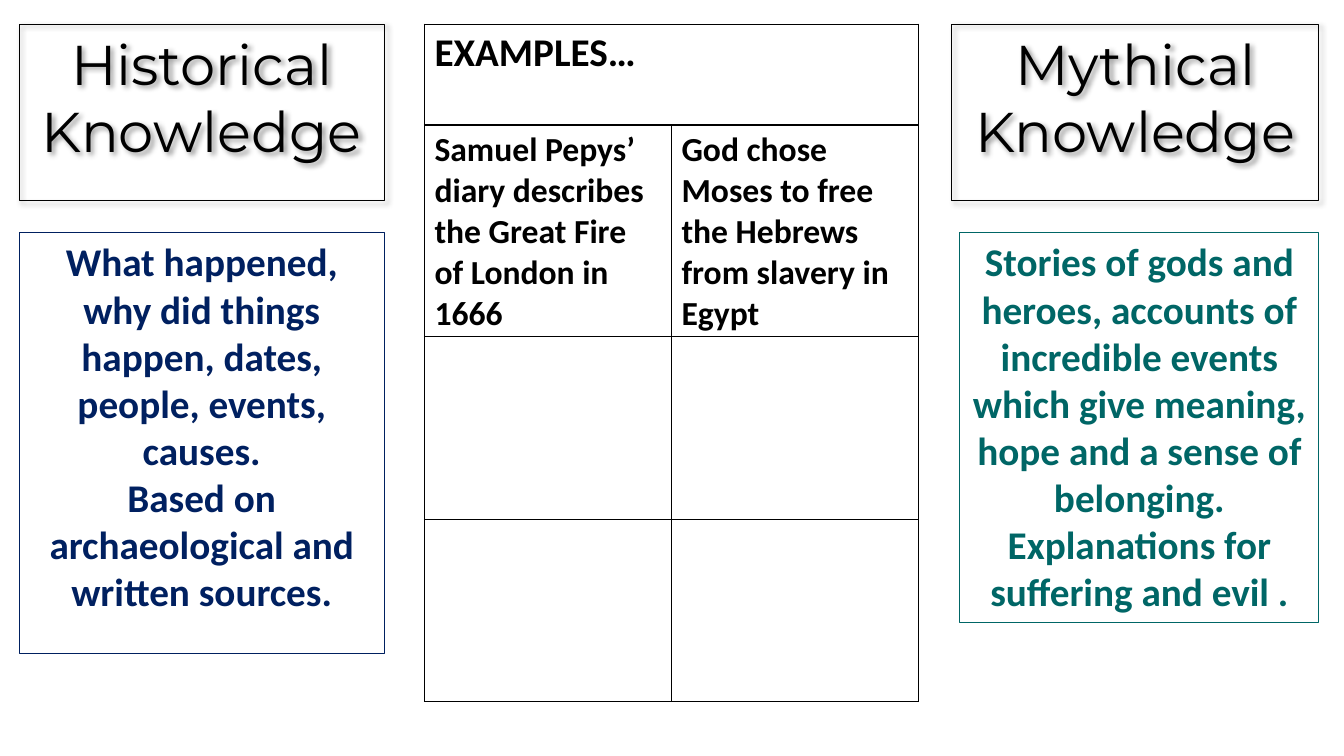
from dataclasses import dataclass

from lxml import etree
from pptx import Presentation
from pptx import util as u
from pptx.dml import color
from pptx.enum import text
from pptx.oxml import ns


@dataclass(frozen=True)
class Theme:
    ink: str = "000000"
    history: str = "002060"
    myth: str = "006666"
    heading_font: str = "Montserrat"
    body_font: str = "Calibri"
    heading_size: int = 40
    body_size: int = 28
    example_size: int = 24
    outline: float = 0.75
    grid: int = 1


class KnowledgeSlide:
    EMU_PER_PX = 9144

    def __init__(self, deck, theme):
        self.theme = theme
        self.slide = deck.slides.add_slide(deck.slide_layouts[6])

    @classmethod
    def px(cls, length):
        return u.Emu(length * cls.EMU_PER_PX)

    def set_words(self, frame, words, font, size, ink, bold, align):
        frame.text = words
        for paragraph in frame.paragraphs:
            paragraph.alignment = align
            for run in paragraph.runs:
                run.font.name = font
                run.font.size = u.Pt(size)
                run.font.bold = bold
                run.font.color.rgb = color.RGBColor.from_string(ink)

    def box(self, bounds, words, font, size, ink, bold):
        panel = self.slide.shapes.add_textbox(*map(self.px, bounds))
        panel.line.color.rgb = color.RGBColor.from_string(ink)
        panel.line.width = u.Pt(self.theme.outline)
        panel.text_frame.word_wrap = True
        self.set_words(panel.text_frame, words, font, size, ink, bold, text.PP_ALIGN.CENTER)
        return panel

    def heading(self, bounds, words):
        theme = self.theme
        panel = self.box(bounds, words, theme.heading_font, theme.heading_size, theme.ink, False)
        panel.shadow.inherit = False
        effects = panel._element.spPr.find(ns.qn("a:effectLst"))
        shadow = etree.SubElement(
            effects, ns.qn("a:outerShdw"), blurRad=str(u.Pt(4)), dist=str(u.Pt(3)),
            dir=str(45 * 60000), algn="tl", rotWithShape="0")
        shade = etree.SubElement(shadow, ns.qn("a:srgbClr"), val=theme.ink)
        etree.SubElement(shade, ns.qn("a:alpha"), val="40000")

    def definition(self, bounds, words, ink):
        self.box(bounds, words, self.theme.body_font, self.theme.body_size, ink, True)

    def border(self, cell):
        properties = cell._tc.get_or_add_tcPr()
        for place, side in enumerate(("lnL", "lnR", "lnT", "lnB")):
            edge = etree.Element(ns.qn(f"a:{side}"), w=str(u.Pt(self.theme.grid)))
            fill = etree.SubElement(edge, ns.qn("a:solidFill"))
            etree.SubElement(fill, ns.qn("a:srgbClr"), val=self.theme.ink)
            properties.insert(place, edge)

    def examples(self, bounds, title, pairs, heights):
        theme = self.theme
        frame = self.slide.shapes.add_table(len(heights), 2, *map(self.px, bounds))
        table = frame.table
        table.first_row = table.horz_banding = False
        for row, height in zip(table.rows, heights):
            row.height = self.px(height)
        for cell in table.iter_cells():
            cell.fill.background()
            cell.margin_bottom = 0
            self.border(cell)
        table.cell(0, 0).merge(table.cell(0, 1))
        entries = [(0, 0, title, theme.body_size)]
        entries += [(r, c, words, theme.example_size)
                    for r, pair in enumerate(pairs, 1) for c, words in enumerate(pair)]
        for r, c, words, size in entries:
            self.set_words(table.cell(r, c).text_frame, words, theme.body_font, size,
                           theme.ink, True, text.PP_ALIGN.LEFT)


def main():
    deck = Presentation()
    deck.slide_width = KnowledgeSlide.px(1333)
    deck.slide_height = KnowledgeSlide.px(750)
    theme = Theme()
    page = KnowledgeSlide(deck, theme)

    page.heading((19, 24, 362, 175), "Historical Knowledge")
    page.heading((944, 24, 364, 175), "Mythical\nKnowledge")
    page.definition(
        (952, 231, 356, 387),
        "Stories of gods and heroes, accounts of incredible events which give meaning, "
        "hope and a sense of belonging. Explanations for suffering and evil .",
        theme.myth)
    page.definition(
        (19, 231, 362, 417),
        "What happened, why did things happen, dates, people, events, causes.\n"
        "Based on archaeological and written sources.",
        theme.history)
    page.examples(
        (421, 24, 490, 672), "EXAMPLES…",
        [("Samuel Pepys’ diary describes the Great Fire of London in 1666",
          "God chose Moses to free the Hebrews from slavery in Egypt")],
        (100, 210, 181, 181))

    deck.save("out.pptx")


if __name__ == "__main__":
    main()
